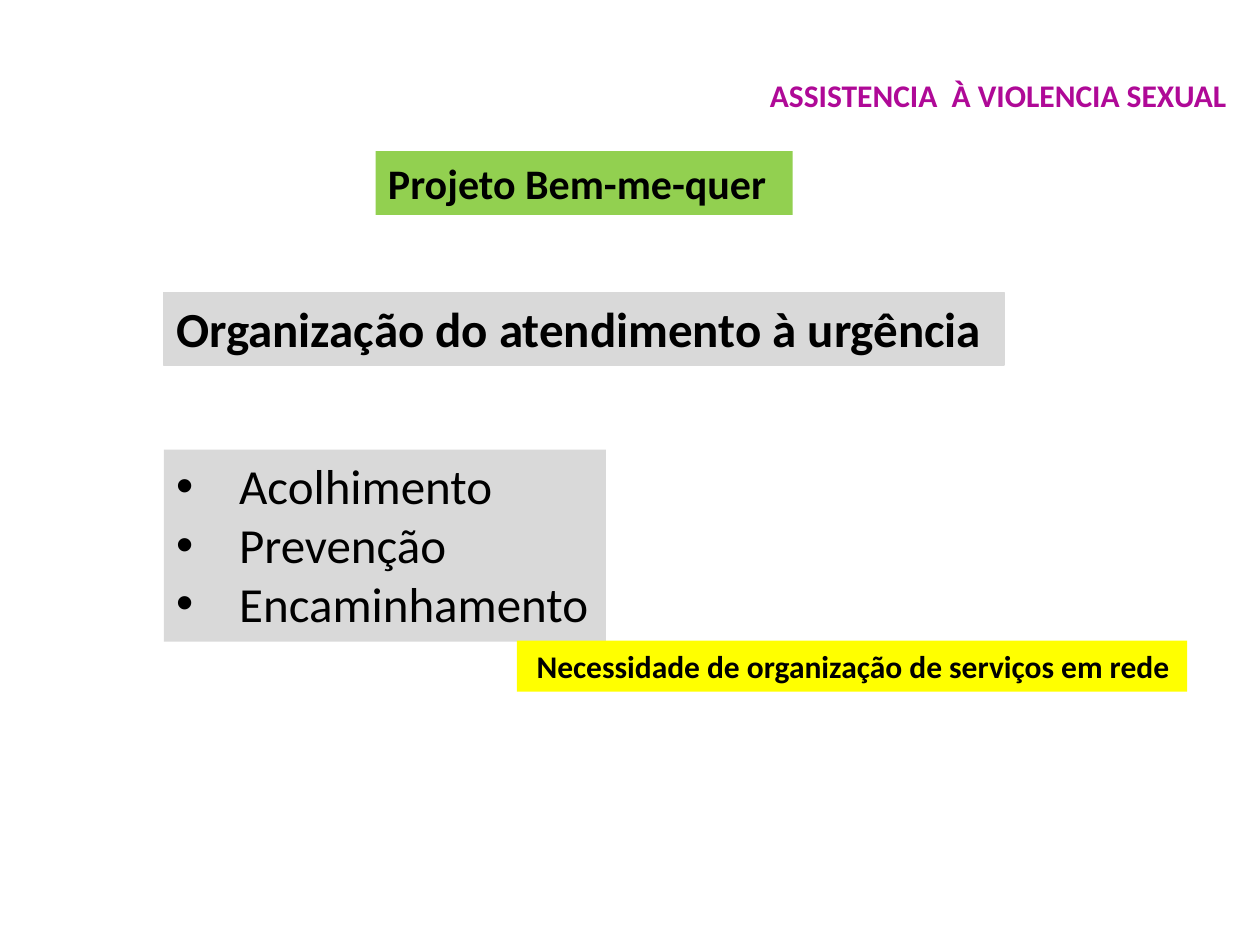
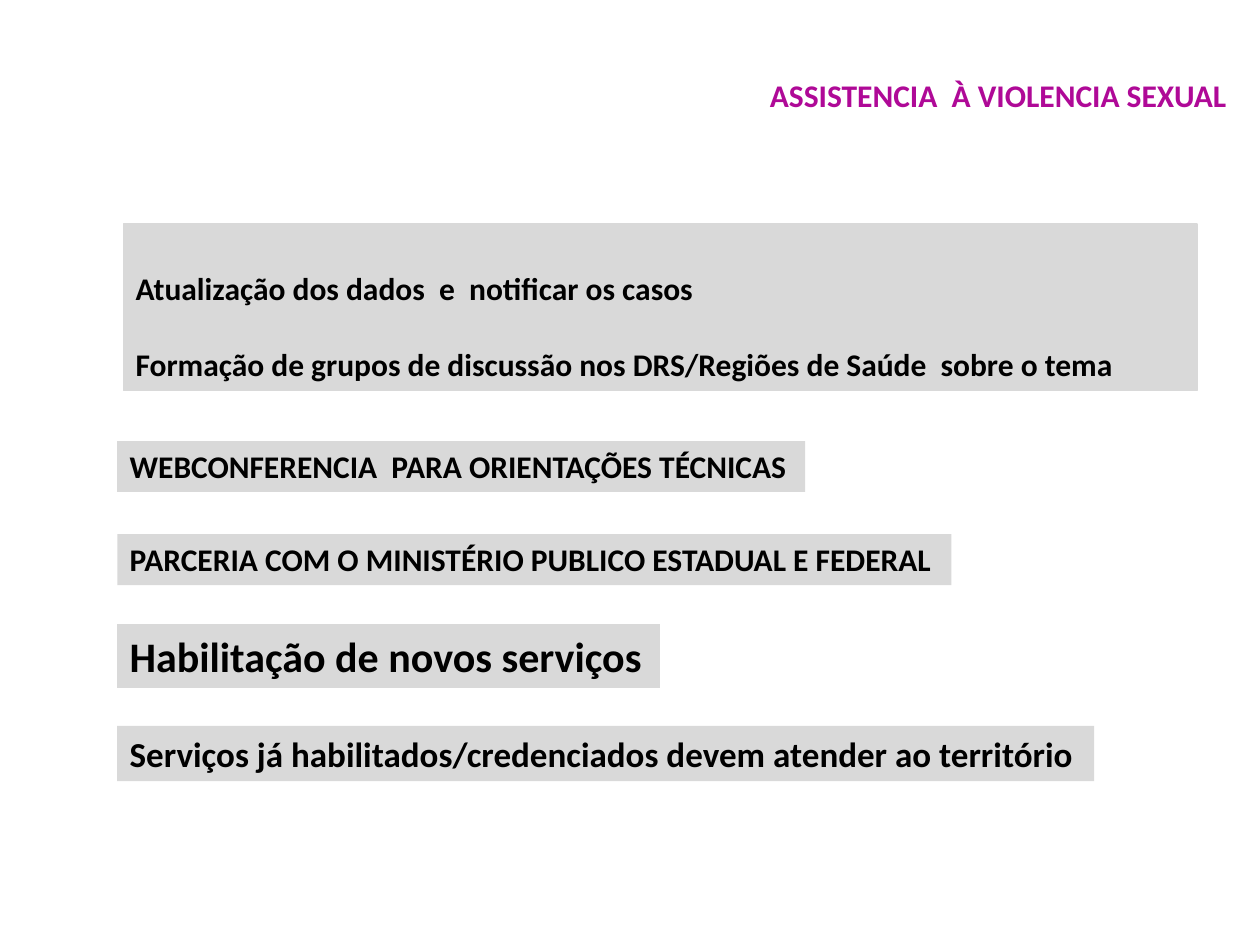
from lxml import etree
from pptx import Presentation
from pptx.dml.color import RGBColor
from pptx.enum.shapes import MSO_SHAPE
from pptx.enum.text import MSO_ANCHOR, MSO_AUTO_SIZE, PP_ALIGN
from pptx.oxml.ns import qn
from pptx.util import Pt

RECTANGLE = MSO_SHAPE.RECTANGLE
TOP = MSO_ANCHOR.TOP
LEFT = PP_ALIGN.LEFT
NO_AUTOFIT = MSO_AUTO_SIZE.NONE

COLOURS = {
    "header": "AF0997",
    "text": "000000",
    "project": "92D050",
    "panel": "D9D9D9",
    "notice": "FFFF00",
}
FONT = "Calibri"
HEADER = "ASSISTENCIA  À VIOLENCIA SEXUAL"
SLIDE_WIDTH, SLIDE_HEIGHT = 720, 540
LINE_HEIGHT = 1.22          # Calibri line height, as a factor of the size
INSET_X, INSET_Y = 7.2, 3.6
BULLET_INDENT = 36


def colour(name):
    return RGBColor.from_string(COLOURS[name])


def height_for(size, lines=1):
    return round(lines * size * LINE_HEIGHT + 2 * INSET_Y, 2)


def place(shape, box):
    for name, value in zip(("left", "top", "width", "height"), box):
        setattr(shape, name, Pt(value))


def add_bullet(para):
    properties = para._p.get_or_add_pPr()
    properties.set("marL", str(Pt(BULLET_INDENT)))
    properties.set("indent", str(-Pt(BULLET_INDENT)))
    etree.SubElement(properties, qn("a:buFont")).set("typeface", "Arial")
    etree.SubElement(properties, qn("a:buChar")).set("char", "•")


def write(shape, lines, size, bold=True, ink="text", bullets=False,
          gap=0, inset_left=INSET_X, inset_top=INSET_Y):
    frame = shape.text_frame
    frame_format = {
        "word_wrap": True, "auto_size": NO_AUTOFIT, "vertical_anchor": TOP,
        "margin_left": Pt(inset_left), "margin_right": Pt(INSET_X),
        "margin_top": Pt(inset_top), "margin_bottom": Pt(INSET_Y),
    }
    for name, value in frame_format.items():
        setattr(frame, name, value)
    font_format = {"name": FONT, "size": Pt(size), "bold": bold}
    for index, line in enumerate(lines):
        para = frame.paragraphs[0] if index == 0 else frame.add_paragraph()
        para.alignment = LEFT
        para.space_before = Pt(gap if index else 0)
        if bullets:
            add_bullet(para)
        span = para.add_run()
        span.text = line
        for name, value in font_format.items():
            setattr(span.font, name, value)
        span.font.color.rgb = colour(ink)


def add_panel(page, box, lines, size, fill="panel", outlined=False, **text_format):
    panel = page.shapes.add_shape(RECTANGLE, *map(Pt, box))
    panel.shadow.inherit = False
    panel.fill.solid()
    panel.fill.fore_color.rgb = colour(fill)
    if outlined:
        panel.line.color.rgb = colour(fill)
        panel.line.width = Pt(0.75)
    else:
        panel.line.fill.background()
    write(panel, lines, size, **text_format)


def add_page(deck):
    """Start a slide with the shared header as its title."""
    page = deck.slides.add_slide(deck.slide_layouts[5])
    place(page.shapes.title, (432.7, 39.6, 282.3, height_for(18)))
    write(page.shapes.title, [HEADER], 18, ink="header")
    return page


def urgent_care(page, box):
    left, top, width, _ = box
    # Project name and topic
    add_panel(page, (left + 121, top, 238.3, height_for(24)),
              ["Projeto Bem-me-quer"], 24, fill="project")
    add_panel(page, (left, top + 80.8, 480.2, height_for(28)),
              ["Organização do atendimento à urgência"], 28, outlined=True)
    # Stages of care
    stages = ["Acolhimento", "Prevenção", "Encaminhamento"]
    stages_top = top + 170.6
    stages_height = height_for(28, len(stages))
    add_panel(page, (left, stages_top, 252.7, stages_height),
              stages, 28, bold=False, bullets=True)
    # Notice, flush with the right side and under the stages
    notice_width = 383
    add_panel(page, (left + width - notice_width, stages_top + stages_height - 0.6,
                     notice_width, height_for(18)),
              ["Necessidade de organização de serviços em rede"], 18,
              fill="notice", inset_left=INSET_X + 4)


def actions(page, box):
    left, top, width, _ = box
    # Data and discussion groups, with one line of air above each
    air = 18 * LINE_HEIGHT
    add_panel(page, (left + 3.4, top, width - 3.4, height_for(18, 4)),
              ["Atualização dos dados  e  notificar os casos",
               "Formação de grupos de discussão nos DRS/Regiões de Saúde  sobre o tema"],
              18, outlined=True, gap=air, inset_top=INSET_Y + air)
    # Single-line actions: offset from top, width, size, text
    rows = [
        (124, 393.1, 18, "WEBCONFERENCIA  PARA ORIENTAÇÕES TÉCNICAS"),
        (177.2, 476.7, 18, "PARCERIA COM O MINISTÉRIO PUBLICO ESTADUAL E FEDERAL"),
        (228.6, 310.1, 24, "Habilitação de novos serviços"),
        (286.8, 558.2, 20, "Serviços já habilitados/credenciados devem atender ao território"),
    ]
    for offset, row_width, size, text in rows:
        add_panel(page, (left, top + offset, row_width, height_for(size)), [text], size)


def main():
    deck = Presentation()
    deck.slide_width, deck.slide_height = Pt(SLIDE_WIDTH), Pt(SLIDE_HEIGHT)
    urgent_care(add_page(deck), (93.6, 86.4, 584.8, 308.9))
    actions(add_page(deck), (67, 128, 617, 318.4))
    deck.save("out.pptx")


if __name__ == "__main__":
    main()
